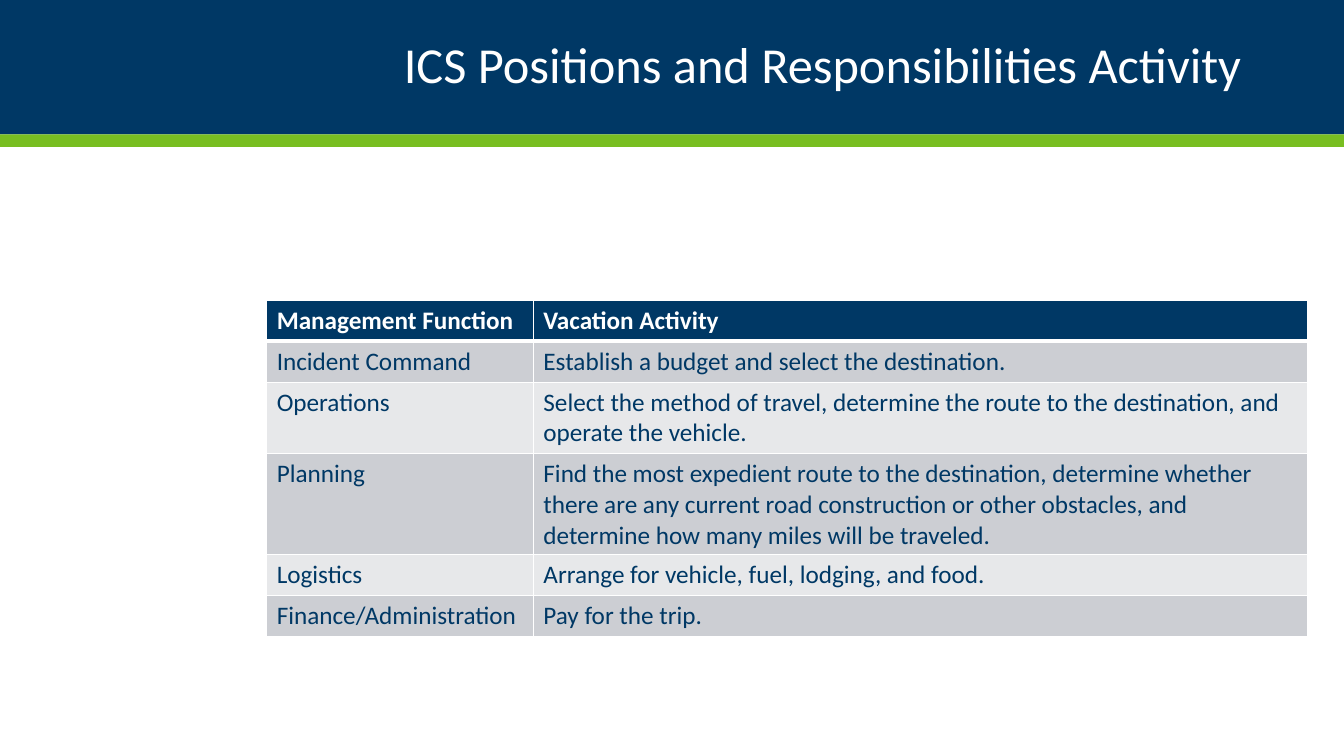
from lxml.etree import SubElement
from pptx import Presentation
from pptx.dml.color import RGBColor
from pptx.enum.shapes import MSO_SHAPE as Preset
from pptx.enum.text import MSO_ANCHOR as Anchor, PP_ALIGN as Align
from pptx.oxml.ns import qn
from pptx.util import Pt

NAVY, GREEN, WHITE = "003865", "78BE21", "FFFFFF"
BANDS = ["CCCED3", "E7E8EA"]
COLUMN_WIDTHS = [254, 737]
ROW_HEIGHTS = [39, 39, 68, 92, 39, 39]
ACTIVITIES = [
    ("Management Function", "Vacation Activity"),
    ("Incident Command", "Establish a budget and select the destination."),
    ("Operations", "Select the method of travel, determine the route to the destination, "
                   "and operate the vehicle."),
    ("Planning", "Find the most expedient route to the destination, determine whether there are "
                 "any current road construction or other obstacles, and determine how many miles "
                 "will be traveled."),
    ("Logistics", "Arrange for vehicle, fuel, lodging, and food."),
    ("Finance/Administration", "Pay for the trip."),
]


def px(length):
    """Turn px into EMU, at 96 px to the inch."""
    return length * 9525


def color(code):
    """Turn a hex string into a colour."""
    return RGBColor.from_string(code)


def apply(target, **values):
    """Set every given attribute on the target."""
    for name, value in values.items():
        setattr(target, name, value)


class SlideBuilder:
    """Holds the style and the current slide."""

    font = "Calibri"

    def __init__(self, page):
        """Start building on a page."""
        self.page = page

    def bar(self, top, height, fill):
        """Draw a plain bar over the full slide width."""
        box = self.page.shapes.add_shape(Preset.RECTANGLE, 0, px(top), px(1280), px(height))
        box.shadow.inherit = False
        box.fill.solid()
        box.fill.fore_color.rgb = color(fill)
        box.line.fill.background()

    def add_span(self, para, text, size, ink, bold=False):
        """Add one formatted span to a paragraph."""
        span = para.add_run()
        span.text = text
        apply(span.font, name=self.font, size=Pt(size), bold=bold)
        span.font.color.rgb = color(ink)

    def title(self, left, top, width, height, text):
        """Add the right-aligned title."""
        box = self.page.shapes.add_textbox(px(left), px(top), px(width), px(height))
        apply(box.text_frame, word_wrap=True, vertical_anchor=Anchor.MIDDLE)
        para = box.text_frame.paragraphs[0]
        apply(para, alignment=Align.RIGHT, line_spacing=0.9)
        self.add_span(para, text, 36, WHITE)

    def borders(self, cell, **widths):
        """Give a cell white edges, with widths in points by side."""
        properties = cell._tc.get_or_add_tcPr()
        for index, side in enumerate("LRTB"):
            line = SubElement(properties, qn("a:ln" + side), w=str(Pt(widths.get(side, 1))))
            fill = SubElement(line, qn("a:solidFill"))
            SubElement(fill, qn("a:srgbClr"), val=WHITE)
            properties.insert(index, line)

    def table(self, left, top, rows):
        """Add the banded table with its header row."""
        frame = self.page.shapes.add_table(len(rows), len(COLUMN_WIDTHS), px(left), px(top),
                                           px(sum(COLUMN_WIDTHS)), px(sum(ROW_HEIGHTS)))
        table = frame.table
        for column, width in zip(table.columns, COLUMN_WIDTHS):
            column.width = px(width)
        for index, (row, height, texts) in enumerate(zip(table.rows, ROW_HEIGHTS, rows)):
            row.height = px(height)
            header = index == 0
            for cell, text in zip(row.cells, texts):
                cell.fill.solid()
                cell.fill.fore_color.rgb = color(NAVY if header else BANDS[(index - 1) % 2])
                self.borders(cell, T=3 if index == 1 else 1, B=3 if header else 1)
                self.add_span(cell.text_frame.paragraphs[0], text, 18,
                              WHITE if header else NAVY, header)


def main():
    """Build and save the deck."""
    deck = Presentation()
    apply(deck, slide_width=px(1280), slide_height=px(720))
    builder = SlideBuilder(deck.slides.add_slide(deck.slide_layouts[6]))
    builder.bar(0, 128, NAVY)
    builder.bar(128, 12, GREEN)
    builder.title(88, 16, 1104, 96, "ICS Positions and Responsibilities Activity")
    builder.table(254, 286, ACTIVITIES)
    deck.save("out.pptx")


if __name__ == "__main__":
    main()
